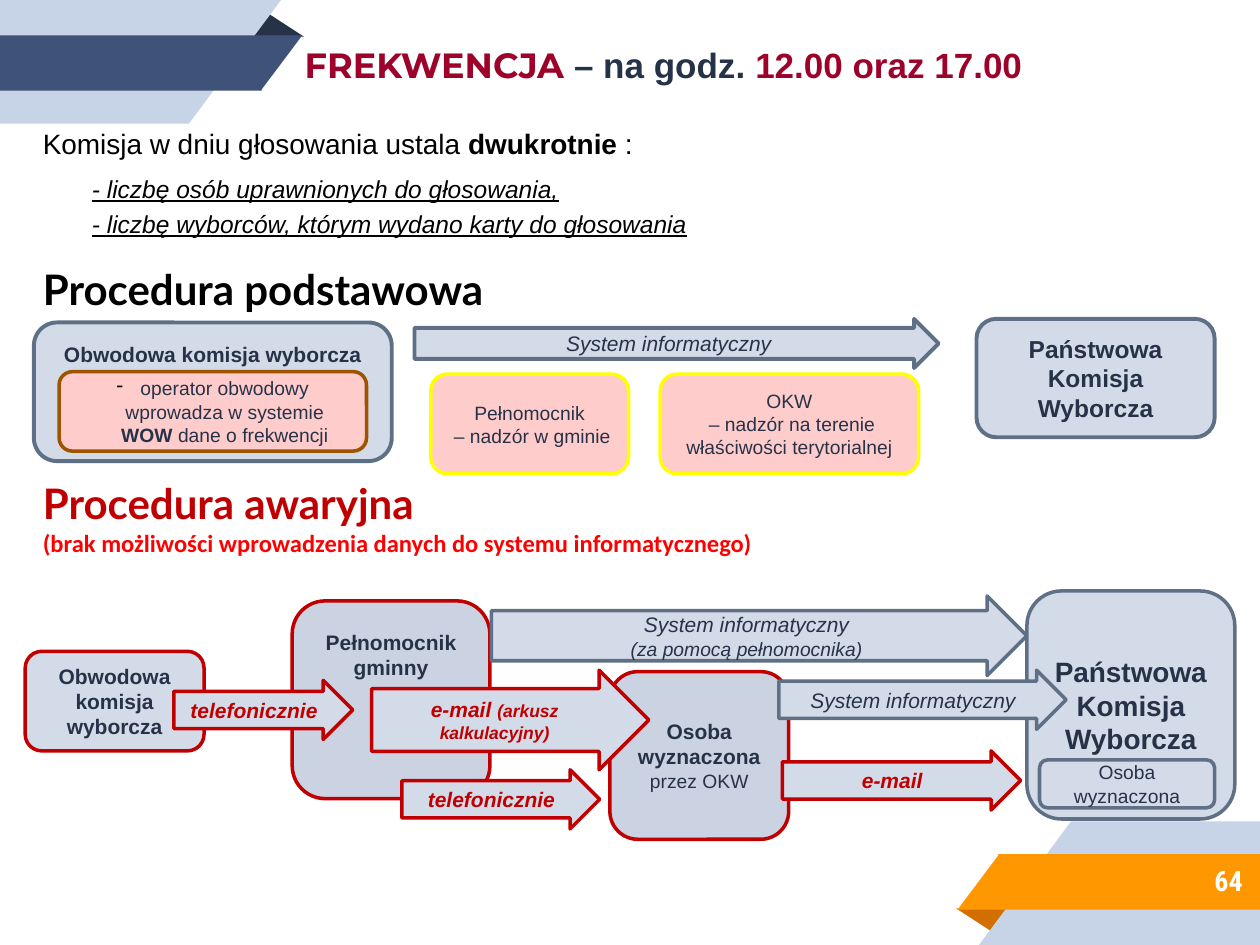
from lxml import etree
from pptx import Presentation
from pptx.dml.color import RGBColor
from pptx.enum.shapes import MSO_SHAPE
from pptx.enum.text import MSO_ANCHOR, MSO_AUTO_SIZE, PP_ALIGN
from pptx.oxml.ns import qn
from pptx.util import Pt

RECTANGLE = MSO_SHAPE.RECTANGLE
RIGHT_TRIANGLE = MSO_SHAPE.RIGHT_TRIANGLE
TRIANGLE = MSO_SHAPE.ISOSCELES_TRIANGLE
ROUNDED = MSO_SHAPE.ROUNDED_RECTANGLE
ARROW = MSO_SHAPE.RIGHT_ARROW
TOP, MIDDLE = MSO_ANCHOR.TOP, MSO_ANCHOR.MIDDLE
LEFT, CENTER, RIGHT = PP_ALIGN.LEFT, PP_ALIGN.CENTER, PP_ALIGN.RIGHT

WIDTH, HEIGHT = 720, 540
COLORS = {
    "pale": "C7D3E6", "blue": "3F5378", "navy": "263248",
    "orange": "FF9800", "brown": "D26F00", "maroon": "9D032A",
    "box": "D4DBE8", "deep box": "CBD3E3", "pink": "FFCCCC",
    "slate": "5F7086", "rust": "9E5300", "yellow": "FFFF00",
    "red": "C00000", "bright red": "FF0000",
    "black": "000000", "white": "FFFFFF",
}


def color(name):
    return RGBColor.from_string(COLORS[name])


def place(shape, left, top, width, height):
    shape.left, shape.top = Pt(left), Pt(top)
    shape.width, shape.height = Pt(width), Pt(height)


def add_run(paragraph, text, size, ink="navy", font="Arial", style=""):
    """Add one run; style holds any of the letters b, i and u."""
    run = paragraph.add_run()
    run.text = text
    run.font.name, run.font.size = font, Pt(size)
    run.font.color.rgb = color(ink)
    run.font.bold, run.font.italic = "b" in style, "i" in style
    run.font.underline = "u" in style


def set_indent(paragraph, margin, first_line=0, bullet=None):
    properties = paragraph._p.get_or_add_pPr()
    properties.set("marL", str(Pt(margin)))
    properties.set("indent", str(Pt(first_line)))
    if bullet is None:
        etree.SubElement(properties, qn("a:buNone"))
        return
    bullet_color = etree.SubElement(properties, qn("a:buClr"))
    etree.SubElement(bullet_color, qn("a:srgbClr"), val=COLORS["black"])
    etree.SubElement(properties, qn("a:buChar"), char=bullet)


def fill_text(frame, paragraphs, alignment):
    """Write paragraphs, each a list of run arguments."""
    for index, runs in enumerate(paragraphs):
        paragraph = frame.paragraphs[0] if index == 0 else frame.add_paragraph()
        paragraph.alignment = alignment
        for run in runs:
            add_run(paragraph, *run)


def add_plain(slide, kind, bounds, fill):
    shape = slide.shapes.add_shape(kind, *map(Pt, bounds))
    shape.shadow.inherit = False
    shape.fill.solid()
    shape.fill.fore_color.rgb = color(fill)
    shape.line.fill.background()
    return shape


def add_corner(slide, back, band, fold, turned=False):
    """Folded ribbon in the top left corner, or turned into the bottom right."""
    parts = [
        (TRIANGLE, (142.6, 7.2, 31, 13.7), fold),
        (RECTANGLE, (0, 0, 108, 70.6), back),
        (RIGHT_TRIANGLE, (108, 0, 52.6, 70.6), back),
        (RECTANGLE, (0, 20.2, 149.5, 31.7), band),
        (RIGHT_TRIANGLE, (149, 20.2, 23.8, 31.7), band),
    ]
    for kind, (left, top, width, height), fill in parts:
        if turned:
            left, top = WIDTH - left - width, HEIGHT - top - height
        shape = add_plain(slide, kind, (left, top, width, height), fill)
        shape.rotation = 180 if turned else 0
        if kind == TRIANGLE:
            shape.adjustments[0] = 0.32
        if kind == RIGHT_TRIANGLE:
            shape.element.spPr.find(qn("a:xfrm")).set("flipV", "1")


def add_node(slide, kind, bounds, paragraphs, fill="box", line="slate", weight=2):
    shape = add_plain(slide, kind, bounds, fill)
    shape.line.color.rgb = color(line)
    shape.line.width = Pt(weight)
    frame = shape.text_frame
    frame.word_wrap = True
    frame.vertical_anchor = MIDDLE
    fill_text(frame, paragraphs, CENTER)
    return shape


def add_box(slide, bounds, paragraphs, fill="box", line="slate", weight=2):
    return add_node(slide, ROUNDED, bounds, paragraphs, fill, line, weight)


def add_arrow(slide, bounds, paragraphs, line="slate", weight=2):
    shape = add_node(slide, ARROW, bounds, paragraphs, "box", line, weight)
    shape.adjustments[0], shape.adjustments[1] = 0.63, 0.5


def align_top(shape, margin):
    shape.text_frame.vertical_anchor = TOP
    shape.text_frame.margin_top = Pt(margin)


def add_title(slide):
    title = slide.shapes.title
    place(title, 99.4, 20.9, 620, 31.7)
    frame = title.text_frame
    frame.auto_size, frame.vertical_anchor = MSO_AUTO_SIZE.NONE, MIDDLE
    fill_text(frame, [[
        ("FREKWENCJA ", 20, "maroon", "Montserrat", "b"),
        ("– na godz. ", 20, "navy", "Arial", "b"),
        ("12.00 oraz 17.00", 20, "maroon", "Arial", "b"),
    ]], LEFT)
    set_indent(frame.paragraphs[0], 67.5)


def add_body(slide):
    body = slide.placeholders[1]
    place(body, 17.3, 70.6, 685.4, 437.8)
    frame = body.text_frame
    frame.auto_size, frame.vertical_anchor = MSO_AUTO_SIZE.NONE, TOP
    # Space before, left margin, runs
    lines = [
        (0, 0, [("Komisja w dniu głosowania ustala ", 16, "black"),
                ("dwukrotnie ", 16, "black", "Arial", "b"),
                (":", 16, "black")]),
        (9.7, 28, [("- liczbę osób uprawnionych do głosowania,",
                    14, "black", "Arial", "iu")]),
        (4.9, 28, [("- liczbę wyborców, którym wydano karty do głosowania",
                    14, "black", "Arial", "iu")]),
        (17.2, 0, [("Procedura podstawowa", 24, "black", "Lato", "b")]),
        (96.5, 0, [("Procedura awaryjna", 24, "red", "Lato", "b")]),
        (2, 0, [("(brak możliwości wprowadzenia danych do systemu informatycznego)",
                 14, "bright red", "Calibri", "b")]),
    ]
    fill_text(frame, [runs for _, _, runs in lines], LEFT)
    for paragraph, (space, margin, _) in zip(frame.paragraphs, lines):
        paragraph.line_spacing = 0.9
        paragraph.space_before = Pt(space)
        set_indent(paragraph, margin)


def bold(text, size=12):
    return (text, size, "navy", "Arial", "b")


def italic(text, size=12):
    return (text, size, "navy", "Arial", "i")


def alert(text, size=12):
    return (text, size, "red", "Arial", "bi")


def add_basic_procedure(slide):
    commission = add_box(slide, (19.4, 184.3, 204.5, 79.2),
                         [[bold("Obwodowa komisja wyborcza")]], weight=2.25)
    align_top(commission, 7)
    add_box(slide, (558, 182.2, 136.1, 67.7),
            [[bold("Państwowa Komisja Wyborcza", 14)]], weight=2.25)
    operator = add_box(slide, (33.8, 212.4, 175.7, 45.4), [[
        ("operator obwodowy wprowadza w systemie", 11),
        bold(" WOW", 11), (" dane o frekwencji", 11)]], "pink", "rust")
    set_indent(operator.text_frame.paragraphs[0], 13.7, -13.7, "-")
    add_box(slide, (246.2, 213.8, 113, 56.9),
            [[("Pełnomocnik", 11)], [(" – nadzór w gminie", 11)]], "pink", "yellow")
    add_box(slide, (377.3, 213.8, 147.6, 56.9),
            [[("OKW", 11)], [(" – nadzór na terenie właściwości terytorialnej", 11)]],
            "pink", "yellow")
    add_arrow(slide, (236.9, 182.2, 299.5, 28.1),
              [[italic("System informatyczny")]], weight=2.25)


def add_emergency_procedure(slide):
    # Participants
    add_box(slide, (14.4, 372.2, 102.2, 56.9),
            [[bold("Obwodowa komisja wyborcza")]], line="red")
    deputy = add_box(slide, (167, 343.4, 113, 113),
                     [[bold("Pełnomocnik gminny")]], "deep box", "red")
    align_top(deputy, 11)
    add_box(slide, (586.8, 337.7, 118.8, 130.3),
            [[bold("Państwowa Komisja Wyborcza", 16)]])
    add_box(slide, (348.5, 383.8, 102.2, 95.8),
            [[bold("Osoba wyznaczona "), ("przez OKW", 11)]], "deep box", "red")
    # Channels
    add_arrow(slide, (280.8, 340.6, 306, 45.4),
              [[italic("System informatyczny")], [italic("(za pomocą pełnomocnika)", 11)]])
    add_arrow(slide, (445, 383, 164.2, 33.8), [[italic("System informatyczny")]])
    add_box(slide, (594, 434.2, 100.1, 27.4), [[("Osoba wyznaczona", 11)]])
    add_arrow(slide, (447.1, 429.1, 136.1, 33.8), [[alert("e-mail")]], "red")
    add_arrow(slide, (99.4, 388.8, 102.2, 33.8), [[alert("telefonicznie")]], "red")
    add_arrow(slide, (212.4, 383, 158.4, 56.9),
              [[alert("e-mail "), alert("(arkusz kalkulacyjny)", 10)]], "red")
    add_arrow(slide, (229.7, 439.9, 113, 33.8), [[alert("telefonicznie")]], "red")


def add_slide_number(slide):
    frame = slide.shapes.add_textbox(*map(Pt, (599.8, 486.7, 117.4, 33.1))).text_frame
    frame.word_wrap, frame.vertical_anchor = True, MIDDLE
    fill_text(frame, [[("64", 16, "white", "Roboto Condensed", "b")]], RIGHT)


def main():
    presentation = Presentation()
    presentation.slide_width, presentation.slide_height = Pt(WIDTH), Pt(HEIGHT)
    slide = presentation.slides.add_slide(presentation.slide_layouts[1])
    add_corner(slide, "pale", "blue", "navy")
    add_corner(slide, "pale", "orange", "brown", turned=True)
    add_title(slide)
    add_body(slide)
    add_basic_procedure(slide)
    add_emergency_procedure(slide)
    add_slide_number(slide)
    presentation.save("out.pptx")


if __name__ == "__main__":
    main()
